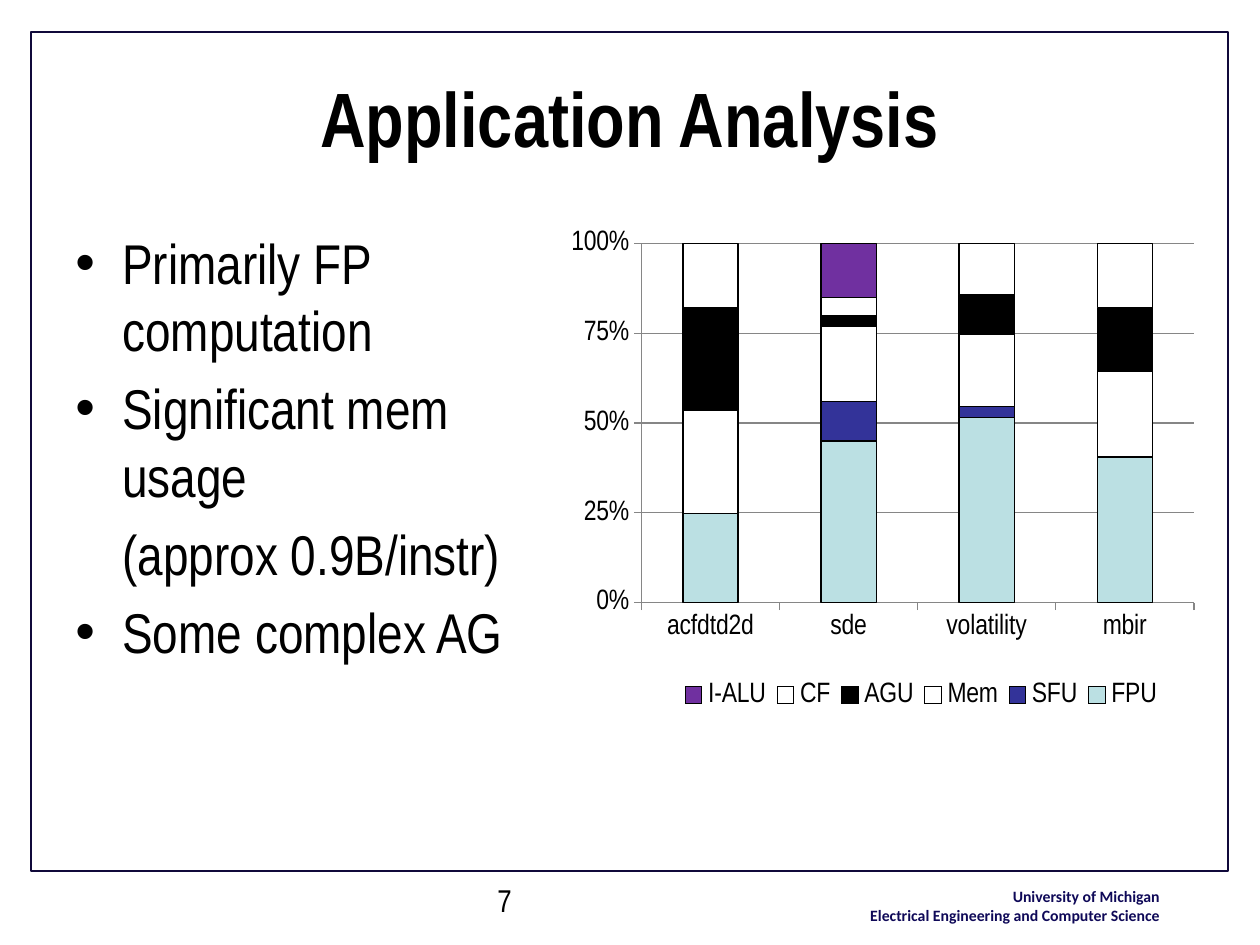
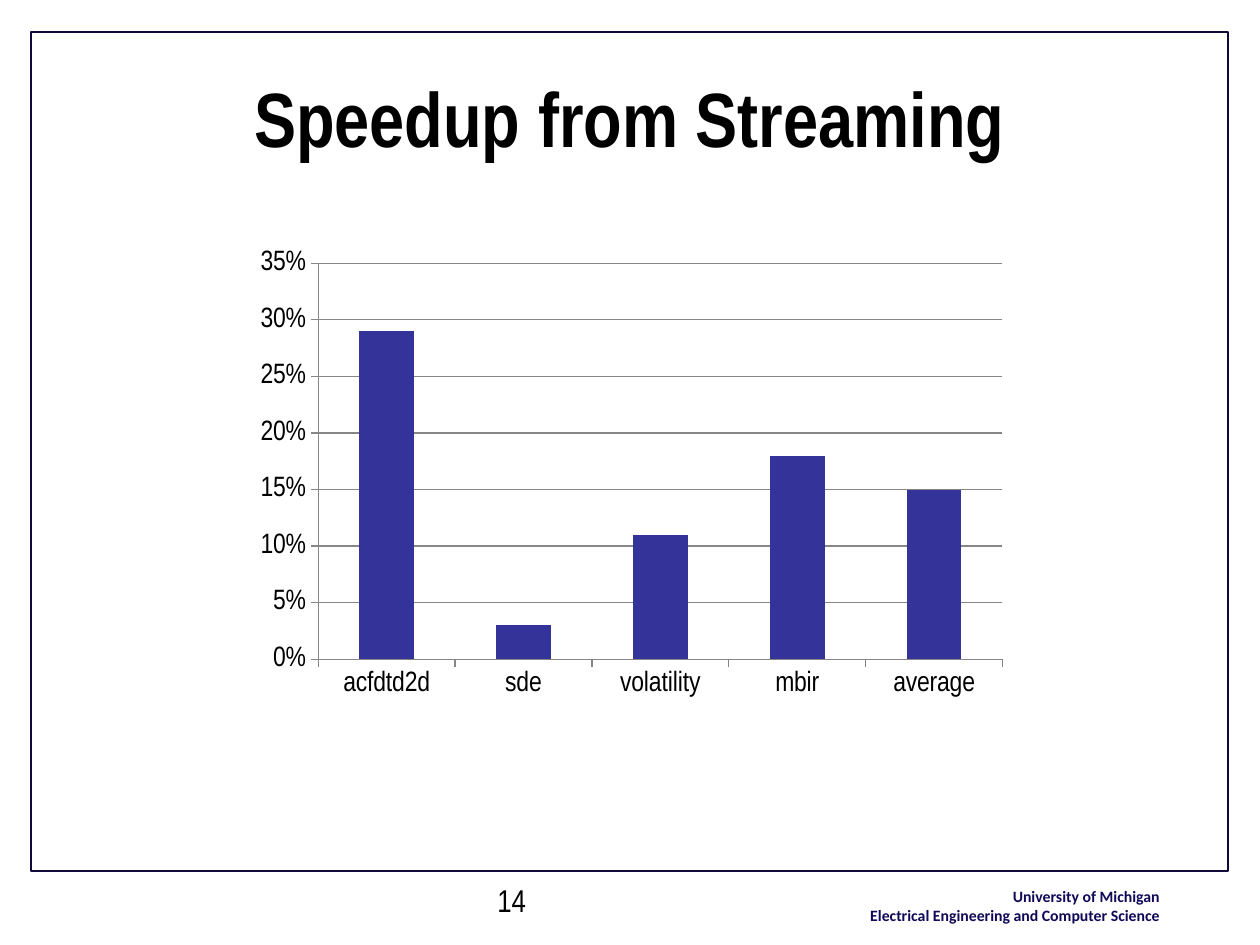
"""Build two slides on application analysis and streaming speedup."""
from dataclasses import dataclass

from lxml.etree import SubElement as Sub
from pptx import Presentation as Deck
from pptx.chart.data import CategoryChartData as Data
from pptx.dml.color import RGBColor as Rgb
from pptx.enum.chart import XL_CHART_TYPE as Kind, XL_LEGEND_POSITION as Side
from pptx.enum.shapes import MSO_SHAPE as Form
from pptx.enum.text import MSO_ANCHOR as Anchor, PP_ALIGN as Align
from pptx.oxml import parse_xml
from pptx.oxml.ns import nsdecls, qn
from pptx.util import Pt

PX = 914400 / 126


@dataclass(frozen=True)
class Theme:
    """Colours, fonts and type sizes of the deck."""
    ink: str = "000000"
    frame: str = "10093A"
    school: str = "0F0958"
    grid: str = "868686"
    blue: str = "333399"
    pale: str = "BBE0E3"
    white: str = "FFFFFF"
    plum: str = "7030A0"
    face: str = "Arial Narrow"
    foot: str = "Calibri"
    title: int = 44
    body: int = 32
    page: int = 18
    label: int = 16
    small: int = 9


T = Theme()
APPS = ["acfdtd2d", "sde", "volatility", "mbir"]
MIX = [
    ("FPU", [25, 45, 51, 41], T.pale),
    ("SFU", [0, 11, 3, 0], T.blue),
    ("Mem", [29, 21, 20, 24], T.white),
    ("AGU", [29, 3, 11, 18], T.ink),
    ("CF", [18, 5, 14, 18], T.white),
    ("I-ALU", [0, 15, 0, 0], T.plum),
]
GAINS = [("Series 1", [0.29, 0.03, 0.11, 0.18, 0.15], T.blue)]
POINTS = [
    ("Primarily FP computation", True),
    ("Significant mem usage", True),
    ("(approx 0.9B/instr)", False),
    ("Some complex AG", True),
]


def emu(*sizes):
    """Turn px into EMU."""
    return [round(size * PX) for size in sizes]


def style(font, size, color=T.ink, bold=False, face=T.face):
    """Set the look of a font."""
    font.name, font.size, font.bold = face, Pt(size), bold
    font.color.rgb = Rgb.from_string(color)


def stroke(line, color, width):
    """Set the colour and width of a line."""
    line.color.rgb = Rgb.from_string(color)
    line.width = Pt(width)


def write(slide, box, lines, size, align=Align.LEFT, anchor=Anchor.TOP, **look):
    """Add a text box and return its paragraphs."""
    frame = slide.shapes.add_textbox(*emu(*box)).text_frame
    frame.word_wrap = True
    frame.vertical_anchor = anchor
    frame.text = "\n".join(lines)
    for para in frame.paragraphs:
        para.alignment = align
        for run in para.runs:
            style(run.font, size, **look)
    return frame.paragraphs


def base(deck, title, page):
    """Add a slide with its frame, title, page number and footer."""
    slide = deck.slides.add_slide(deck.slide_layouts[6])
    frame = slide.shapes.add_shape(Form.RECTANGLE, *emu(31, 32, 1197, 839))
    frame.shadow.inherit = False
    frame.fill.background()
    stroke(frame.line, T.frame, 1.25)
    school = ["University of Michigan", "Electrical Engineering and Computer Science"]
    write(slide, (806, 881, 366, 50), school, T.small, Align.RIGHT,
          color=T.school, bold=True, face=T.foot)
    write(slide, (485, 875, 294, 55), [str(page)], T.page)
    write(slide, (63, 38, 1134, 158), [title], T.title, Align.CENTER,
          Anchor.MIDDLE, bold=True)
    return slide


def bullets(slide, box, points):
    """Add a list whose unmarked lines align with the marked ones."""
    paras = write(slide, box, [text for text, _ in points], T.body)
    indent = emu(47)[0]
    for num, (para, (_, mark)) in enumerate(zip(paras, points)):
        para.space_before = Pt(6.4 if num else 0)
        props = para._p.get_or_add_pPr()
        props.set("marL", str(indent))
        props.set("indent", str(-indent if mark else 0))
        if mark:
            Sub(props, qn("a:buFont"), typeface="Arial")
            Sub(props, qn("a:buChar"), char="•")


def place(parent, spot, index, inner=False):
    """Fix the layout of a chart part by fractions of the chart."""
    for old in parent.findall(qn("c:layout")):
        parent.remove(old)
    target = '<c:layoutTarget val="inner"/>' if inner else ""
    modes = "".join(f'<c:{axis}Mode val="edge"/>' for axis in "xy")
    sizes = "".join(f'<c:{key} val="{val}"/>' for key, val in zip("xywh", spot))
    parent.insert(index, parse_xml(
        f'<c:layout {nsdecls("c")}><c:manualLayout>{target}{modes}{sizes}'
        "</c:manualLayout></c:layout>"))


def bars(slide, box, kind, names, rows, plot, top, step, edge=False):
    """Add a column chart and return it."""
    data = Data()
    data.categories = names
    for name, vals, _ in rows:
        data.add_series(name, vals)
    chart = slide.shapes.add_chart(kind, *emu(*box), data).chart
    chart.has_title = chart.has_legend = False
    style(chart.font, T.label)
    group = chart.plots[0]
    group.gap_width = 150
    group.vary_by_categories = False
    for series, (_, _, color) in zip(group.series, rows):
        series.format.fill.solid()
        series.format.fill.fore_color.rgb = Rgb.from_string(color)
        series.invert_if_negative = False
        if edge:
            stroke(series.format.line, T.ink, 0.75)
    scale = chart.value_axis
    scale.minimum_scale, scale.maximum_scale, scale.major_unit = 0, top, step
    scale.has_major_gridlines = True
    scale.tick_labels.number_format = "0%"
    scale.tick_labels.number_format_is_linked = False
    stroke(scale.major_gridlines.format.line, T.grid, 0.75)
    for axis in (scale, chart.category_axis):
        style(axis.tick_labels.font, T.label)
        stroke(axis.format.line, T.grid, 0.75)
    place(chart.element.find(".//" + qn("c:plotArea")), plot, 0, inner=True)
    return chart


def legend(chart, spot):
    """Add a legend at a fixed spot."""
    chart.has_legend = True
    chart.legend.position = Side.RIGHT
    chart.legend.include_in_layout = False
    style(chart.legend.font, T.label)
    place(chart.element.find(".//" + qn("c:legend")), spot, 1)


def main():
    """Build and save the deck."""
    deck = Deck()
    deck.slide_width, deck.slide_height = emu(1260, 945)

    slide = base(deck, "Application Analysis", 7)
    chart = bars(slide, (570, 218, 650, 513), Kind.COLUMN_STACKED_100, APPS, MIX,
                 (0.11, 0.05, 0.85, 0.7), 1, 0.25, edge=True)
    chart.plots[0].overlap = 100
    legend(chart, (0.16, 0.89, 0.76, 0.08))
    bullets(slide, (63, 222, 510, 622), POINTS)

    slide = base(deck, "Speedup from Streaming", 14)
    bars(slide, (249, 240, 769, 466), Kind.COLUMN_CLUSTERED, APPS + ["average"],
         GAINS, (0.09, 0.05, 0.89, 0.85), 0.35, 0.05)
    deck.save("out.pptx")


if __name__ == "__main__":
    main()
